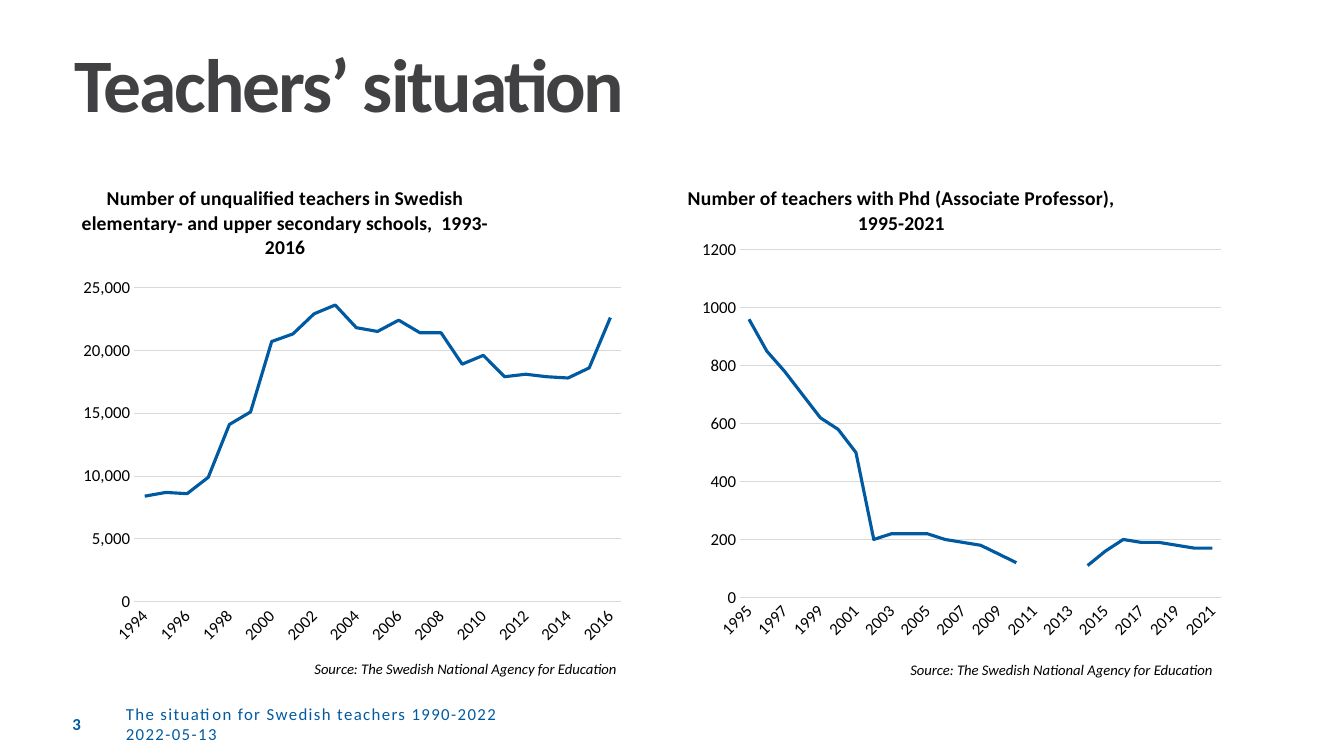
from pptx import Presentation
from pptx import util as u
from pptx.chart.data import CategoryChartData
from pptx.dml.color import RGBColor
from pptx.enum import chart as ch, text as tx
from pptx.oxml import parse_xml
from pptx.oxml.ns import nsdecls, qn

# Content
TITLE = "Teachers’ situation"
FOOTER = "The situation for Swedish teachers 1990-2022\n2022-05-13"
PAGE = "3"
SOURCE = "Source: The Swedish National Agency for Education"
CHARTS = [
    dict(
        title="Number of unqualified teachers in Swedish elementary- "
              "and upper secondary schools,  1993-2016",
        first=1994, top=25000, step=5000, form="#,##0",
        box=(0.72, 1.7, 5.55, 4.8), plot=(0.11, 0.24, 0.87, 0.65),
        note=(3.02, 6.5),
        vals=[8400, 8700, 8600, 9900, 14100, 15100, 20700, 21300, 22900,
              23600, 21800, 21500, 22400, 21400, 21400, 18900, 19600, 17900,
              18100, 17900, 17800, 18600, 22600]),
    dict(
        title="Number of teachers with Phd (Associate Professor), 1995-2021",
        first=1995, top=1200, step=200, form="General",
        box=(6.73, 1.7, 5.55, 4.86), plot=(0.11, 0.16, 0.86, 0.71),
        note=(8.93, 6.51),
        vals=[960, 850, 780, 700, 620, 580, 500, 200, 220, 220, 220, 200,
              190, 180, 150, 120, None, None, None, 110, 160, 200, 190, 190,
              180, 170, 170]),
]

FONT = "Calibri"
BLUE = RGBColor(0x00, 0x5A, 0xA1)
DARK = RGBColor(0x41, 0x40, 0x42)
BLACK = RGBColor(0, 0, 0)
GREY = RGBColor(0xD9, 0xD9, 0xD9)

deck = Presentation()
deck.slide_width, deck.slide_height = u.Inches(13.33), u.Inches(7.5)
slide = deck.slides.add_slide(deck.slide_layouts[6])


def style(font, size, color=BLACK, bold=False, italic=False):
    font.name, font.size = FONT, u.Pt(size)
    font.bold, font.italic = bold, italic
    font.color.rgb = color


def write(words, box, size, color=BLACK, bold=False, italic=False,
          space=0, inset=None, lead=None, wrap=True, mid=False):
    frame = slide.shapes.add_textbox(*map(u.Inches, box)).text_frame
    frame.word_wrap = wrap
    if mid:
        frame.vertical_anchor = tx.MSO_ANCHOR.MIDDLE
    if inset is not None:
        frame.margin_left = frame.margin_right = u.Inches(inset)
        frame.margin_top = frame.margin_bottom = u.Inches(inset)
    frame.text = words
    for para in frame.paragraphs:
        if lead:
            para.line_spacing = u.Pt(lead)
        for run in para.runs:
            style(run.font, size, color, bold, italic)
            if space:
                run.font._element.set("spc", str(int(space * 100)))


def place(node, index, spots, inner=False):
    """Give a chart part a manual layout, in fractions of the chart."""
    old = node.find(qn("c:layout"))
    if old is not None:
        node.remove(old)
    tags = '<c:layoutTarget val="inner"/>' if inner else ""
    tags += '<c:xMode val="edge"/><c:yMode val="edge"/>'
    tags += "".join(f'<c:{k} val="{v}"/>' for k, v in zip("xywh", spots))
    node.insert(index, parse_xml(
        f'<c:layout {nsdecls("c")}><c:manualLayout>{tags}'
        '</c:manualLayout></c:layout>'))


def rule(line):
    line.color.rgb, line.width = GREY, u.Pt(0.75)


def plot(item):
    data = CategoryChartData(number_format=item["form"])
    vals = item["vals"]
    data.categories = [str(item["first"] + i) for i in range(len(vals))]
    data.add_series("Series 1", vals)
    chart = slide.shapes.add_chart(
        ch.XL_CHART_TYPE.LINE, *map(u.Inches, item["box"]), data).chart
    style(chart.font, 14)
    chart.has_legend = False

    # Title and plot area
    frame = chart.chart_title.text_frame
    frame.text = item["title"]
    style(frame.paragraphs[0].runs[0].font, 14, bold=True)
    place(chart.chart_title._element, 1, (0.01, 0.02))
    area = chart._chartSpace.chart.plotArea
    place(area, 0, item["plot"], inner=True)

    # Axes
    years, count = chart.category_axis, chart.value_axis
    for axis in (years, count):
        style(axis.tick_labels.font, 12)
        axis.major_tick_mark = axis.minor_tick_mark = ch.XL_TICK_MARK.NONE
    rule(years.format.line)
    years._element.find(qn("c:txPr")).find(qn("a:bodyPr")).set(
        "rot", "-2700000")
    count.format.line.fill.background()
    count.has_major_gridlines = True
    rule(count.major_gridlines.format.line)
    count.minimum_scale, count.maximum_scale = 0, item["top"]
    count.major_unit = item["step"]
    count.tick_labels.number_format = item["form"]
    count.tick_labels.number_format_is_linked = False

    # Line
    chart.plots[0].vary_by_categories = False
    series = chart.plots[0].series[0]
    series.smooth = False
    series.marker.style = ch.XL_MARKER_STYLE.NONE
    series.format.line.color.rgb = BLUE
    series.format.line.width = u.Pt(2.25)


# Heading and footer
write(TITLE, (0.74, 0.52, 11.85, 0.91), 54, DARK, bold=True,
      space=-1.5, inset=0, lead=54)
write(FOOTER, (1.15, 6.98, 4.97, 0.4), 12, BLUE, space=1, mid=True)
write(PAGE, (0.62, 6.98, 0.83, 0.4), 12, BLUE, bold=True, mid=True)

# Charts with their sources
for item in CHARTS:
    plot(item)
    write(SOURCE, (*item["note"], 3.25, 0.28), 10.5, italic=True, wrap=False)

deck.save("out.pptx")
